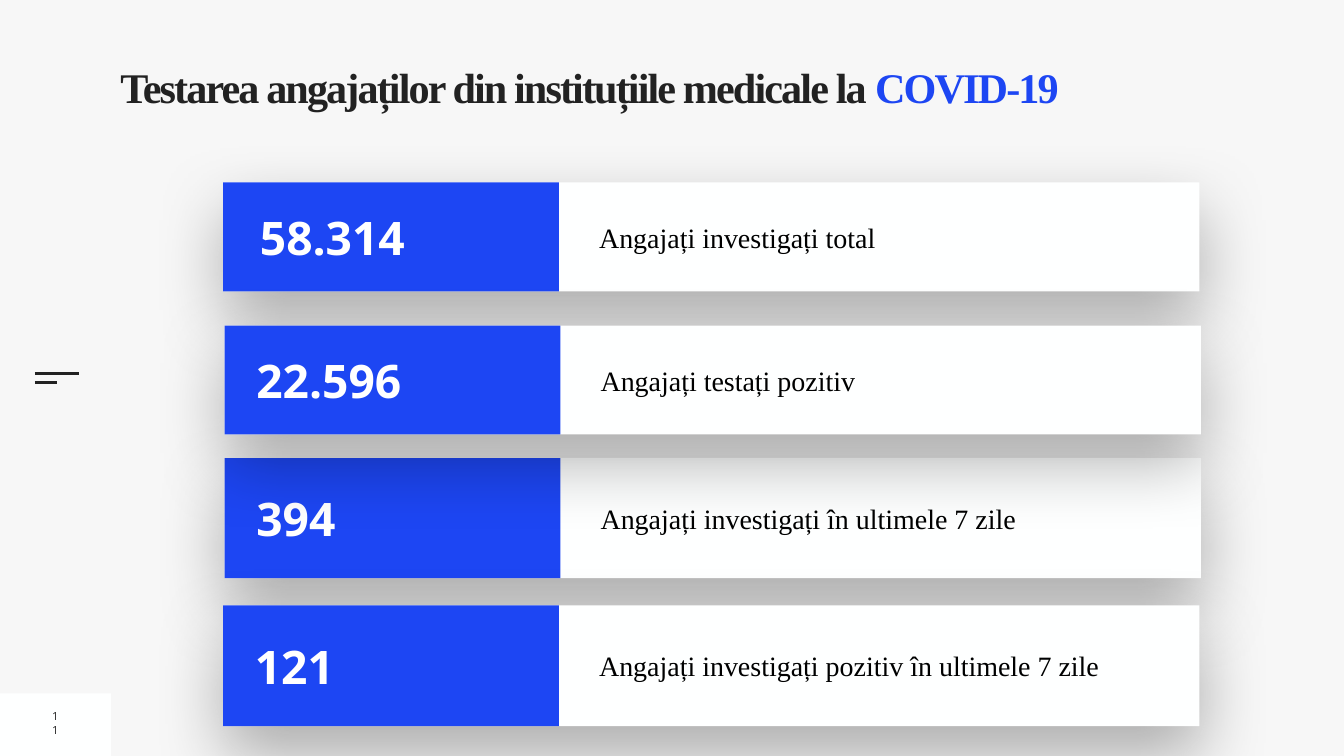
import dataclasses

import lxml.etree
import pptx
import pptx.dml.color
import pptx.enum.shapes
import pptx.enum.text
import pptx.oxml.ns
import pptx.util

Inches = pptx.util.Inches
Pt = pptx.util.Pt
Align = pptx.enum.text.PP_ALIGN
Anchor = pptx.enum.text.MSO_ANCHOR

COLORS = {
    "back": "F7F7F7",
    "card": "FEFFFF",
    "blue": "1D46F3",
    "dark": "222222",
    "black": "000000",
    "white": "FFFFFF",
}
SERIF = "Times New Roman"
SANS = "Open Sans"
CARD_W = 19.37
BLUE_W = 6.66
LABEL_X = 7.36


@dataclasses.dataclass
class Row:
    left: float
    top: float
    height: float
    count: str
    label: str
    indent: float = 0.53


@dataclasses.dataclass
class Style:
    font: str
    size: float
    color: str
    bold: bool = False
    space: float = 0


# The second row comes last, so that its shadow falls on the third.
ROWS = [
    Row(4.43, 3.62, 2.16, "58.314", "Angajați investigați total", 0.63),
    Row(4.46, 9.09, 2.38, "394", "Angajați investigați în ultimele 7 zile"),
    Row(4.43, 12.01, 2.4, "121", "Angajați investigați pozitiv în ultimele 7 zile"),
    Row(4.46, 6.46, 2.16, "22.596", "Angajați testați pozitiv"),
]
COUNT = Style(SANS, 66, "white", True)
LABEL = Style(SERIF, 40, "black")
TITLE = Style(SERIF, 60.3, "dark", True, -2.7)
ACCENT = dataclasses.replace(TITLE, color="blue")
NUMBER = Style(SANS, 16, "dark")


def get_color(name: str) -> pptx.dml.color.RGBColor:
    return pptx.dml.color.RGBColor.from_string(COLORS[name])


def add_rect(shapes, left: float, top: float, width: float, height: float, color: str):
    rect = shapes.add_shape(
        pptx.enum.shapes.MSO_SHAPE.RECTANGLE,
        Inches(left), Inches(top), Inches(width), Inches(height),
    )
    rect.shadow.inherit = False
    rect.fill.solid()
    rect.fill.fore_color.rgb = get_color(color)
    rect.line.fill.background()
    return rect


def add_shadow(shape) -> None:
    tag = pptx.oxml.ns.qn
    effects = shape._element.spPr.find(tag("a:effectLst"))
    outer = lxml.etree.SubElement(
        effects, tag("a:outerShdw"), blurRad=str(Pt(100)), dist=str(Pt(40)),
        dir="5400000", algn="t", rotWithShape="0",
    )
    color = lxml.etree.SubElement(outer, tag("a:srgbClr"), val=COLORS["black"])
    lxml.etree.SubElement(color, tag("a:alpha"), val="30000")


def add_text(shapes, left: float, top: float, width: float, height: float,
             runs: list[tuple[str, Style]], inset: float = 0.1,
             anchor=Anchor.MIDDLE, align=Align.LEFT):
    box = shapes.add_textbox(Inches(left), Inches(top), Inches(width), Inches(height))
    frame = box.text_frame
    frame.word_wrap = True
    frame.vertical_anchor = anchor
    frame.margin_left = frame.margin_right = Inches(inset)
    frame.margin_top = frame.margin_bottom = Inches(inset)
    para = frame.paragraphs[0]
    para.alignment = align
    for text, style in runs:
        run = para.add_run()
        run.text = text
        run.font.name = style.font
        run.font.size = Pt(style.size)
        run.font.bold = style.bold
        run.font.color.rgb = get_color(style.color)
        if style.space:
            run.font._element.set("spc", str(round(style.space * 100)))
    return box


def add_line(shapes, left: float, right: float, top: float) -> None:
    line = shapes.add_connector(
        pptx.enum.shapes.MSO_CONNECTOR.STRAIGHT,
        Inches(left), Inches(top), Inches(right), Inches(top),
    )
    line.line.color.rgb = get_color("dark")
    line.line.width = Pt(3)
    lxml.etree.SubElement(line._element.spPr, pptx.oxml.ns.qn("a:effectLst"))


def add_row(shapes, row: Row) -> None:
    """Draw one card with its label, blue panel and count."""
    group = shapes.add_group_shape().shapes
    card = add_rect(group, row.left, row.top, CARD_W, row.height, "card")
    add_shadow(card)
    mid = row.top + row.height / 2
    add_text(group, row.left + LABEL_X, mid - 0.4, 11.76, 0.8, [(row.label, LABEL)])
    add_rect(group, row.left, row.top, BLUE_W, row.height, "blue")
    add_text(group, row.left + row.indent, mid - 0.65, 6, 1.3, [(row.count, COUNT)])


def main() -> None:
    deck = pptx.Presentation()
    deck.slide_width = Inches(26.67)
    deck.slide_height = Inches(15)
    slide = deck.slides.add_slide(deck.slide_layouts[6])
    slide.background.fill.solid()
    slide.background.fill.fore_color.rgb = get_color("back")
    shapes = slide.shapes

    add_rect(shapes, 0, 13.76, 2.2, 1.24, "card")
    add_line(shapes, 0.69, 1.57, 7.41)
    add_line(shapes, 0.69, 1.13, 7.59)
    title = add_text(
        shapes, 2.39, 1.42, 23, 1.58,
        [("Testarea angajaților din instituțiile medicale la ", TITLE),
         ("COVID-19", ACCENT)],
        inset=0, anchor=Anchor.TOP,
    )
    title.text_frame.paragraphs[0].line_spacing = 0.8
    add_text(shapes, 0.93, 14.09, 0.34, 0.51, [("11", NUMBER)], align=Align.CENTER)
    for row in ROWS:
        add_row(shapes, row)
    deck.save("out.pptx")


if __name__ == "__main__":
    main()
